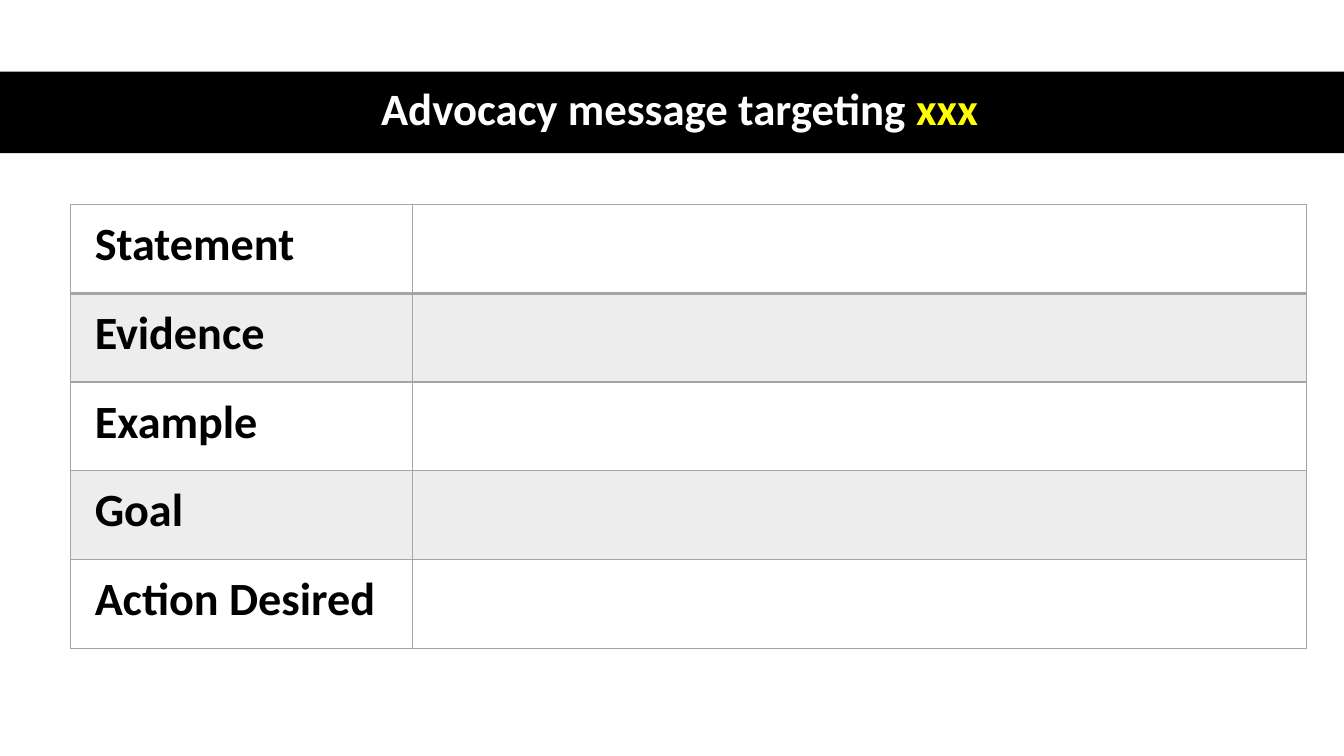
from pptx import Presentation
from pptx.dml.color import RGBColor
from pptx.enum.shapes import MSO_SHAPE as Shape
from pptx.enum.text import MSO_ANCHOR as Anchor, PP_ALIGN as Align
from pptx.oxml import parse_xml
from pptx.oxml.ns import nsdecls
from pptx.util import Inches, Pt

BLACK = RGBColor(0x00, 0x00, 0x00)
WHITE = RGBColor(0xFF, 0xFF, 0xFF)
YELLOW = RGBColor(0xFF, 0xFF, 0x00)
GREY = RGBColor(0xA5, 0xA5, 0xA5)
LIGHT_GREY = RGBColor(0xED, 0xED, 0xED)

ROW_LABELS = ["Statement", "Evidence", "Example", "Goal", "Action Desired"]
COLUMN_WIDTHS = [3.39, 8.87]
ROW_HEIGHT = 0.88


def add_span(para, text, size, color):
    span = para.add_run()
    span.text = text
    span.font.name = "Calibri"
    span.font.size = Pt(size)
    span.font.bold = True
    span.font.color.rgb = color


def add_borders(cell, bottom_width):
    # Borders come before the fill in the cell properties
    properties = cell._tc.get_or_add_tcPr()
    widths = {"lnL": 1, "lnR": 1, "lnT": 1, "lnB": bottom_width}
    for position, (side, width) in enumerate(widths.items()):
        border = parse_xml(
            f'<a:{side} {nsdecls("a")} w="{Pt(width)}"><a:solidFill>'
            f'<a:srgbClr val="{GREY}"/></a:solidFill></a:{side}>')
        properties.insert(position, border)


deck = Presentation()
deck.slide_width = Inches(13.33)
deck.slide_height = Inches(7.5)
page = deck.slides.add_slide(deck.slide_layouts[5])

# Title
title = page.shapes.title
title.left, title.top = Inches(0.61), Inches(0.7)
title.width, title.height = Inches(12.26), Inches(0.81)
title.text_frame.vertical_anchor = Anchor.MIDDLE
title.text_frame.word_wrap = True
para = title.text_frame.paragraphs[0]
para.alignment = Align.CENTER
para.line_spacing = 0.9
add_span(para, "Advocacy message targeting ", 32, WHITE)
add_span(para, "xxx", 32, YELLOW)

# Black band behind the title
band = page.shapes.add_shape(
    Shape.RECTANGLE, 0, Inches(0.71), deck.slide_width, Inches(0.81))
band.shadow.inherit = False
band.fill.solid()
band.fill.fore_color.rgb = BLACK
band.line.fill.background()
title.element.addprevious(band.element)

# Message table
table = page.shapes.add_table(
    len(ROW_LABELS), len(COLUMN_WIDTHS), Inches(0.7), Inches(2.03),
    Inches(sum(COLUMN_WIDTHS)), Inches(ROW_HEIGHT * len(ROW_LABELS))).table
table.first_row = False
for column, width in zip(table.columns, COLUMN_WIDTHS):
    column.width = Inches(width)

for index, label in enumerate(ROW_LABELS):
    row = table.rows[index]
    row.height = Inches(ROW_HEIGHT)
    for cell in row.cells:
        cell.margin_left = cell.margin_right = Inches(0.24)
        cell.margin_top = cell.margin_bottom = Inches(0.12)
        cell.fill.solid()
        cell.fill.fore_color.rgb = LIGHT_GREY if index % 2 else WHITE
        add_borders(cell, bottom_width=1 if index else 2)
    add_span(row.cells[0].text_frame.paragraphs[0], label, 33, BLACK)

deck.save("out.pptx")
